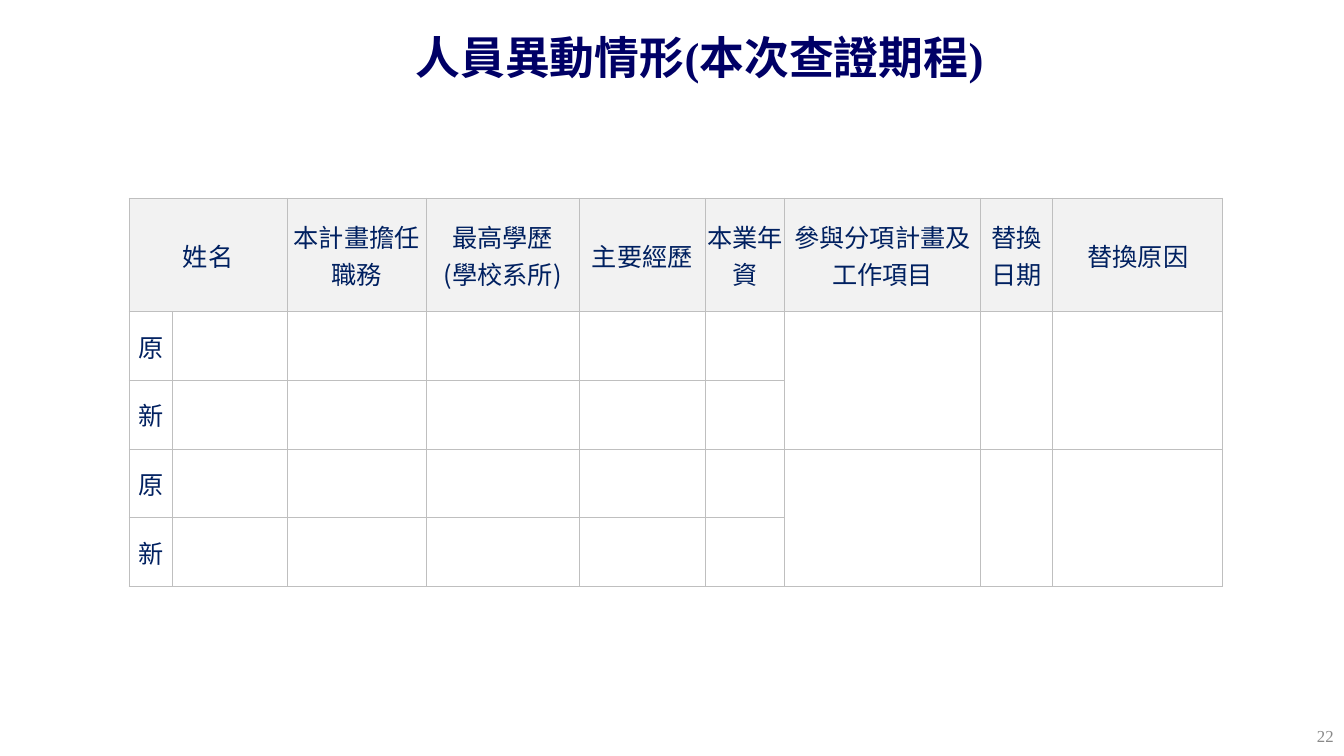
"""Build the personnel change slide with its replacement table."""
from lxml import etree
from pptx import Presentation
from pptx.dml.color import RGBColor
from pptx.enum.text import MSO_ANCHOR, PP_ALIGN
from pptx.oxml.ns import qn
from pptx.util import Cm, Pt

MIDDLE = MSO_ANCHOR.MIDDLE
CENTER, RIGHT = PP_ALIGN.CENTER, PP_ALIGN.RIGHT
NAVY = RGBColor(0x00, 0x00, 0x66)
INK = RGBColor(0x00, 0x20, 0x60)
GRAY = RGBColor(0x89, 0x89, 0x89)
HEADER_FILL = RGBColor(0xF2, 0xF2, 0xF2)
WHITE = RGBColor(0xFF, 0xFF, 0xFF)
BORDER = RGBColor(0xBF, 0xBF, 0xBF)
SANS, SERIF = "Noto Sans CJK SC", "Times New Roman"


def format_text(tf, size, font, color, align, bold=False):
    tf.vertical_anchor = MIDDLE
    for p in tf.paragraphs:
        p.alignment = align
        for r in p.runs:
            r.font.size = Pt(size)
            r.font.bold = bold
            r.font.name = font
            r.font.color.rgb = color
            ea = etree.SubElement(r._r.get_or_add_rPr(), qn("a:ea"))
            ea.set("typeface", SANS)


def add_borders(cell):
    tcPr = cell._tc.get_or_add_tcPr()
    for i, side in enumerate(("a:lnL", "a:lnR", "a:lnT", "a:lnB")):
        ln = etree.Element(qn(side), w=str(Pt(0.75)))
        fill = etree.SubElement(ln, qn("a:solidFill"))
        etree.SubElement(fill, qn("a:srgbClr"), val=str(BORDER))
        tcPr.insert(i, ln)


prs = Presentation()
prs.slide_width, prs.slide_height = Cm(33.87), Cm(19.05)
s = prs.slides.add_slide(prs.slide_layouts[5])

title = s.shapes.title
title.left, title.top, title.width, title.height = Cm(6.2), Cm(0.43), Cm(22.86), Cm(2.01)
title.text_frame.text = "人員異動情形(本次查證期程)"
format_text(title.text_frame, 32, SERIF, NAVY, CENTER, bold=True)

headers = ["姓名", "", "本計畫擔任職務", "最高學歷\n(學校系所)", "主要經歷",
           "本業年資", "參與分項計畫及工作項目", "替換日期", "替換原因"]
col_widths = [1.09, 2.9, 3.5, 3.86, 3.17, 2.01, 4.92, 1.83, 4.29]
row_heights = [2.86] + [1.73] * 4
rows = [headers] + [[label] + [""] * 8 for label in ("原", "新") * 2]

frame = s.shapes.add_table(len(rows), len(headers), Cm(3.25), Cm(5),
                           Cm(sum(col_widths)), Cm(sum(row_heights)))
table = frame.table
for col, width in zip(table.columns, col_widths):
    col.width = Cm(width)
for row, height in zip(table.rows, row_heights):
    row.height = Cm(height)

for i, texts in enumerate(rows):
    for j, text in enumerate(texts):
        cell = table.cell(i, j)
        cell.margin_left = cell.margin_right = Cm(0.05)
        cell.margin_top = cell.margin_bottom = 0
        cell.vertical_anchor = MIDDLE
        cell.fill.solid()
        cell.fill.fore_color.rgb = WHITE if i else HEADER_FILL
        add_borders(cell)
        if text:
            cell.text_frame.text = text
            format_text(cell.text_frame, 18, SANS, INK, CENTER)

table.cell(0, 0).merge(table.cell(0, 1))
for i in (1, 3):
    for j in (6, 7, 8):
        table.cell(i, j).merge(table.cell(i + 1, j))

number = s.shapes.add_textbox(Cm(25.96), Cm(18.03), Cm(7.9), Cm(1.02))
number.text_frame.word_wrap = True
number.text_frame.text = "22"
format_text(number.text_frame, 12, SERIF, GRAY, RIGHT)

prs.save("out.pptx")
